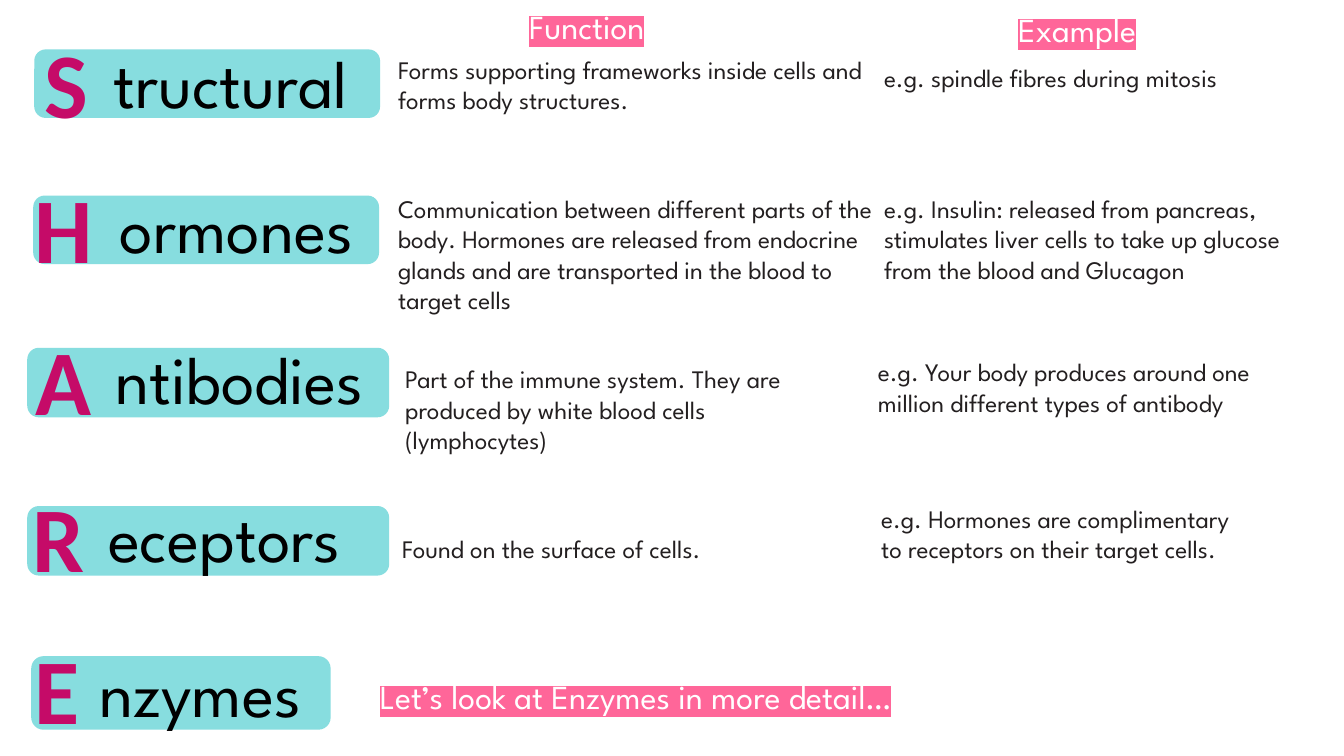
from pptx import Presentation
from pptx.dml.color import RGBColor
from pptx.enum import shapes, text
from pptx.oxml import parse_xml
from pptx.oxml.ns import nsdecls
from pptx.util import Inches, Pt

TEAL = RGBColor(0x87, 0xDD, 0xDF)
PINK = RGBColor(0xFF, 0x66, 0x99)
ROSE = RGBColor(0xC5, 0x0B, 0x68)
INK = RGBColor(0x23, 0x1F, 0x20)
BLACK = RGBColor(0, 0, 0)
WHITE = RGBColor(255, 255, 255)

# Bar box, letter box, then the rest of the word and its box
WORDS = [
    ((0.34, 0.49, 3.43, 0.68), "S", (0.34, 0.21, 0.64),
     "tructural ", (0.82, 0.36, 3.1)),
    ((0.33, 1.94, 3.43, 0.68), "H", (0.24, 1.65, 0.79),
     "ormones", (0.83, 1.8, 3.03)),
    ((0.27, 3.45, 3.59, 0.69), "A", (0.25, 3.16, 0.76),
     "ntibodies", (0.79, 3.3, 3.17)),
    ((0.27, 5.02, 3.59, 0.69), "R", (0.22, 4.71, 0.72),
     "eceptors", (0.67, 4.86, 3.11)),
    ((0.31, 6.51, 2.97, 0.73), "E", (0.24, 6.22, 0.65),
     "nzymes", (0.69, 6.4, 2.59)),
]

NOTES = [
    ("Forms supporting frameworks inside cells and forms body structures.",
     (3.85, 0.49, 4.81, 0.71)),
    ("e.g. spindle fibres during mitosis", (8.67, 0.57, 4.66, 0.4)),
    ("Communication between different parts of the body. Hormones are "
     "released from endocrine glands and are transported in the blood to "
     "target cells", (3.85, 1.87, 4.96, 1.62)),
    ("e.g. Insulin: released from pancreas, stimulates liver cells to take "
     "up glucose from the blood and Glucagon", (8.67, 1.87, 4.33, 1.31)),
    ("Part of the immune system. They are produced by white blood "
     "cells (lymphocytes)", (3.92, 3.56, 4.43, 1.01)),
    ("e.g. Your body produces around one million different types of antibody",
     (8.61, 3.49, 4.16, 1.01)),
    ("Found on the surface of cells.", (3.89, 5.24, 6.67, 0.4)),
    ("e.g. Hormones are complimentary to receptors on their target cells.",
     (8.64, 4.94, 3.68, 1.01)),
]

HEADS = [
    ("Let’s look at Enzymes in more detail…", (3.67, 6.66, 6.67, 0.5)),
    ("Function", (5.15, 0.01, 6.67, 0.5)),
    ("Example", (10, 0.04, 3.33, 0.5)),
]


class Deck:
    def __init__(self):
        self.prs = Presentation()
        self.prs.slide_width = Inches(13.33)
        self.prs.slide_height = Inches(7.5)
        self.slide = self.prs.slides.add_slide(self.prs.slide_layouts[6])
        self.face = "League Spartan"

    def bar(self, box):
        kind = shapes.MSO_SHAPE.ROUNDED_RECTANGLE
        bar = self.slide.shapes.add_shape(kind, *map(Inches, box))
        bar.shadow.inherit = False
        bar.fill.solid()
        bar.fill.fore_color.rgb = TEAL
        bar.line.fill.background()

    def label(self, words, box, size=18, color=INK, face=None, bold=None,
              mark=None, mid=False):
        """Add a text box; mid centres it unwrapped, mark highlights it."""
        frame = self.slide.shapes.add_textbox(*map(Inches, box)).text_frame
        frame.word_wrap = not mid
        frame.auto_size = text.MSO_AUTO_SIZE.SHAPE_TO_FIT_TEXT
        para = frame.paragraphs[0]
        if mid:
            para.alignment = text.PP_ALIGN.CENTER
        run = para.add_run()
        run.text = words
        font = run.font
        font.size = Pt(size)
        font.bold = bold
        font.color.rgb = color
        if mark is not None:
            run._r.get_or_add_rPr().append(parse_xml(
                f'<a:highlight {nsdecls("a")}><a:srgbClr val="{mark}"/>'
                '</a:highlight>'))
        font.name = face or self.face


def main():
    deck = Deck()
    for bar, *_ in WORDS:
        deck.bar(bar)
    for _, first, spot, rest, place in WORDS:
        deck.label(rest, (*place, 0.91), size=48, color=BLACK, mid=True)
        deck.label(first, (*spot, 1.21), size=66, color=ROSE, face="Calibri",
                   bold=True, mid=True)
    for words, box in NOTES:
        deck.label(words, box)
    for words, box in HEADS:
        deck.label(words, box, size=24, color=WHITE, mark=PINK)
    deck.prs.save("out.pptx")


if __name__ == "__main__":
    main()
